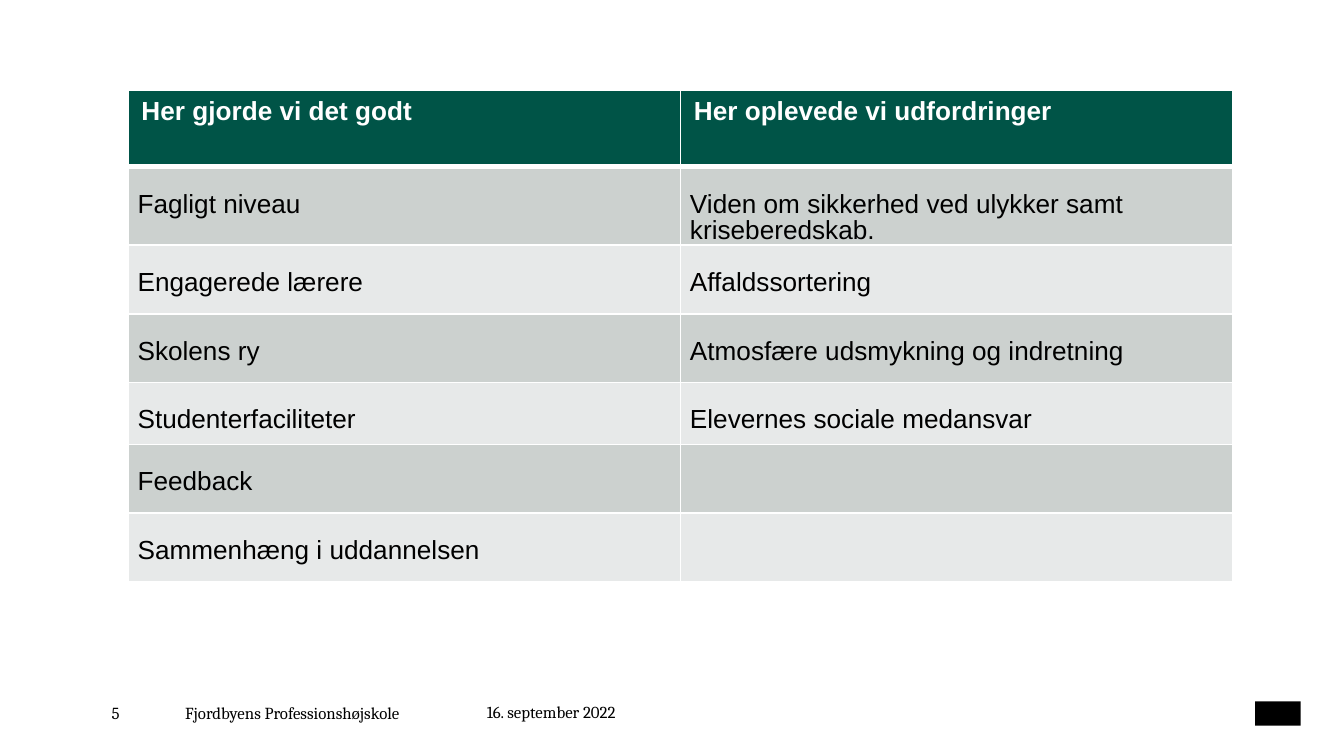
from dataclasses import dataclass

from lxml import etree
from pptx import Presentation
from pptx import util as u
from pptx.dml.color import RGBColor
from pptx.enum import shapes
from pptx.oxml import ns

GREEN = RGBColor(0x00, 0x54, 0x47)
DARK_BAND = RGBColor(0xCC, 0xD1, 0xCF)
LIGHT_BAND = RGBColor(0xE7, 0xE9, 0xE9)
WHITE = RGBColor(0xFF, 0xFF, 0xFF)
BLACK = RGBColor(0x00, 0x00, 0x00)

HEADINGS = ("Her gjorde vi det godt", "Her oplevede vi udfordringer")


@dataclass
class EvaluationRow:
    strength: str
    challenge: str = ""
    height: float = 1.3


@dataclass
class FooterItem:
    text: str
    left: float
    top: float
    width: float


EVALUATION = [
    EvaluationRow("Fagligt niveau", "Viden om sikkerhed ved ulykker samt kriseberedskab.", 1.48),
    EvaluationRow("Engagerede lærere", "Affaldssortering"),
    EvaluationRow("Skolens ry", "Atmosfære udsmykning og indretning"),
    EvaluationRow("Studenterfaciliteter", "Elevernes sociale medansvar", 1.17),
    EvaluationRow("Feedback"),
    EvaluationRow("Sammenhæng i uddannelsen"),
]

FOOTER = [
    FooterItem("5", 2.11, 13.28, 1.17),
    FooterItem("Fjordbyens Professionshøjskole", 3.5, 13.28, 5.28),
    FooterItem("16. september 2022", 9.2, 13.26, 7.11),
]


def format_runs(paragraph, font_name: str, size: float, color: RGBColor, bold: bool = False) -> None:
    for run in paragraph.runs:
        run.font.name = font_name
        run.font.size = u.Pt(size)
        run.font.bold = bold
        run.font.color.rgb = color


def set_borders(cell, bottom_width: float = 1) -> None:
    """Outline a cell in white; call before filling, as the schema wants lines first."""
    properties = cell._tc.get_or_add_tcPr()
    for tag, width in (("a:lnL", 1), ("a:lnR", 1), ("a:lnT", 1), ("a:lnB", bottom_width)):
        line = etree.SubElement(properties, ns.qn(tag), w=str(u.Pt(width)))
        fill = etree.SubElement(line, ns.qn("a:solidFill"))
        etree.SubElement(fill, ns.qn("a:srgbClr"), val=str(WHITE))


def fill_cell(cell, color: RGBColor) -> None:
    cell.fill.solid()
    cell.fill.fore_color.rgb = color


def write_heading(cell, heading: str) -> None:
    set_borders(cell, bottom_width=3)
    fill_cell(cell, GREEN)
    cell.text_frame.text = heading
    format_runs(cell.text_frame.paragraphs[0], "Arial", 14, WHITE, bold=True)


def write_entry(cell, entry: str, color: RGBColor) -> None:
    set_borders(cell)
    fill_cell(cell, color)
    cell.margin_left = cell.margin_right = u.Cm(0.18)
    cell.margin_top = u.Cm(0.49)  # one line of space above the entry
    cell.margin_bottom = 0
    paragraph = cell.text_frame.paragraphs[0]
    paragraph.text = entry
    paragraph.line_spacing = u.Pt(14)
    format_runs(paragraph, "Arial", 14, BLACK)


def add_evaluation_table(slide) -> None:
    heights = [1.45] + [row.height for row in EVALUATION]
    table = slide.shapes.add_table(
        len(heights), len(HEADINGS), u.Cm(2.42), u.Cm(1.7), u.Cm(20.88), u.Cm(sum(heights))
    ).table
    for row, height in zip(table.rows, heights):
        row.height = u.Cm(height)
    for column, heading in enumerate(HEADINGS):
        write_heading(table.cell(0, column), heading)
    for index, row in enumerate(EVALUATION, start=1):
        band = DARK_BAND if index % 2 else LIGHT_BAND
        for column, entry in enumerate((row.strength, row.challenge)):
            write_entry(table.cell(index, column), entry, band)


def add_footer_item(slide, item: FooterItem) -> None:
    shape = slide.shapes.add_textbox(u.Cm(item.left), u.Cm(item.top), u.Cm(item.width), u.Cm(0.38))
    frame = shape.text_frame
    frame.word_wrap = True
    frame.margin_left = frame.margin_right = frame.margin_top = frame.margin_bottom = 0
    frame.text = item.text
    format_runs(frame.paragraphs[0], "Cambria", 9, BLACK)


def add_emblem(slide) -> None:
    shape = slide.shapes.add_shape(
        shapes.MSO_SHAPE.RECTANGLE, u.Cm(23.72), u.Cm(13.26), u.Cm(0.86), u.Cm(0.46)
    )
    shape.shadow.inherit = False
    shape.fill.solid()
    shape.fill.fore_color.rgb = BLACK
    shape.line.fill.background()


def main() -> None:
    presentation = Presentation()
    presentation.slide_width = u.Cm(25.4)
    presentation.slide_height = u.Cm(14.29)
    slide = presentation.slides.add_slide(presentation.slide_layouts[6])

    # Table of strengths and challenges
    add_evaluation_table(slide)

    # Footer
    for item in FOOTER:
        add_footer_item(slide, item)
    add_emblem(slide)

    presentation.save("out.pptx")


if __name__ == "__main__":
    main()
